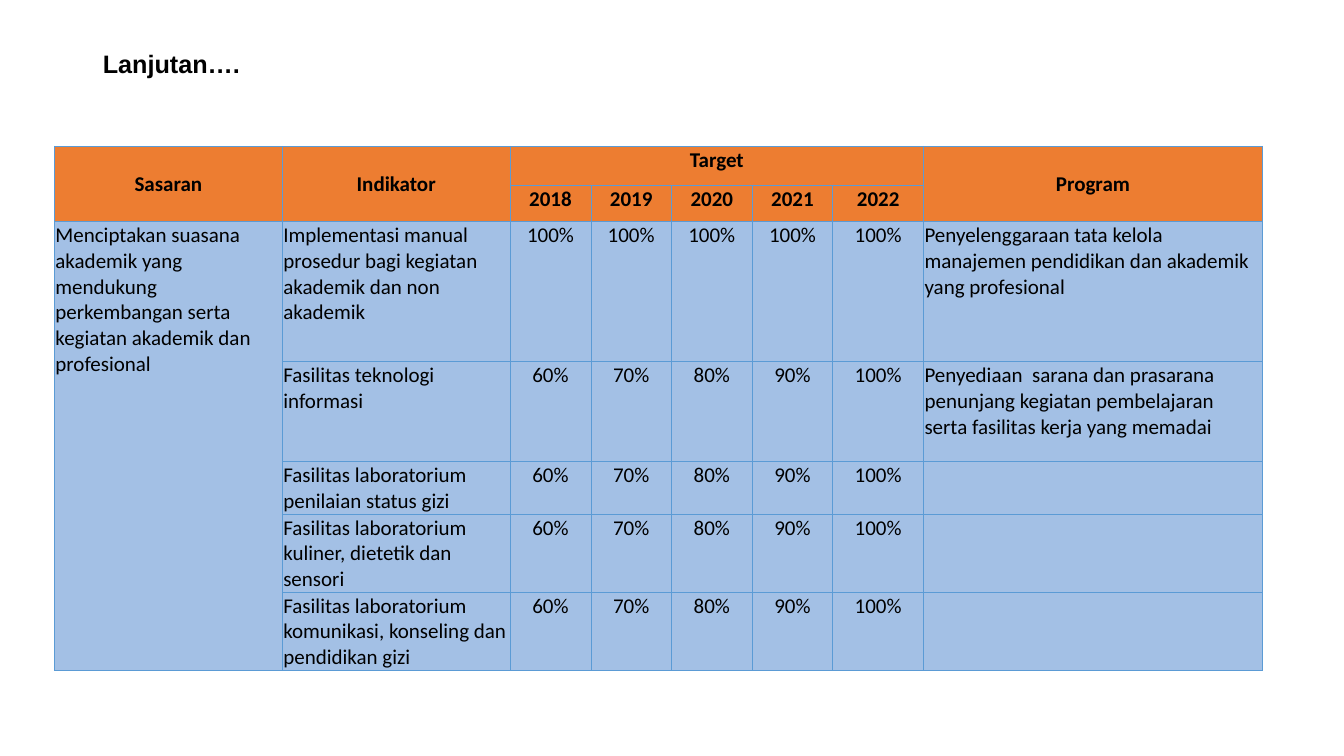
from lxml.etree import SubElement
from pptx import Presentation
from pptx.dml.color import RGBColor
from pptx.enum.text import MSO_ANCHOR, PP_ALIGN
from pptx.oxml.ns import qn
from pptx.util import Inches, Pt

BLACK = RGBColor(0x00, 0x00, 0x00)
ORANGE = RGBColor(0xED, 0x7D, 0x31)
LIGHT_BLUE = RGBColor(0xA3, 0xC0, 0xE5)
BORDER_BLUE = RGBColor(0x5B, 0x9B, 0xD5)

YEARS = ["2018", "2019", "2020", "2021", "2022"]
RISING_TARGETS = ["60%", "70%", "80%", "90%", "100%"]
COLUMN_WIDTHS = [2.26, 2.26, 0.8, 0.8, 0.8, 0.8, 0.9, 3.36]
ROW_HEIGHTS = [0.39, 0.36, 1.39, 0.99, 0.4, 0.59, 0.59]
HEADER_ROWS = 2
YEAR_COLUMNS = range(2, 7)

PLAN = [
    ["Sasaran", "Indikator", "Target", "", "", "", "", "Program"],
    ["", "", *YEARS, ""],
    ["Menciptakan suasana akademik yang mendukung  perkembangan serta "
     "kegiatan akademik dan profesional",
     "Implementasi manual prosedur bagi kegiatan akademik dan non akademik",
     *["100%"] * len(YEARS),
     "Penyelenggaraan tata kelola manajemen pendidikan dan akademik yang profesional"],
    ["", "Fasilitas teknologi informasi", *RISING_TARGETS,
     "Penyediaan  sarana dan prasarana penunjang kegiatan pembelajaran "
     "serta fasilitas kerja yang memadai"],
    ["", "Fasilitas laboratorium penilaian status gizi", *RISING_TARGETS, ""],
    ["", "Fasilitas laboratorium kuliner, dietetik dan sensori", *RISING_TARGETS, ""],
    ["", "Fasilitas laboratorium komunikasi, konseling dan pendidikan gizi",
     *RISING_TARGETS, ""],
]
MERGES = [((0, 0), (1, 0)), ((0, 1), (1, 1)), ((0, 2), (0, 6)),
          ((0, 7), (1, 7)), ((2, 0), (6, 0))]


class SlideBuilder:
    title_font = {"name": "Arial", "size": Pt(18), "bold": True}
    table_font = {"name": "Calibri", "size": Pt(15)}
    cell_margins = {"margin_left": Inches(0.01), "margin_right": Inches(0.01),
                    "margin_top": Inches(0.01), "margin_bottom": 0}

    def __init__(self, presentation):
        self.slide = presentation.slides.add_slide(presentation.slide_layouts[5])

    def apply(self, target, values):
        for attribute, value in values.items():
            setattr(target, attribute, value)

    def style_text(self, paragraph, font):
        self.apply(paragraph.font, font)
        paragraph.font.color.rgb = BLACK

    def title(self, text, left, top, width, height):
        heading = self.slide.shapes.title
        self.apply(heading, {"left": Inches(left), "top": Inches(top),
                             "width": Inches(width), "height": Inches(height)})
        heading.text_frame.text = text
        heading.text_frame.vertical_anchor = MSO_ANCHOR.MIDDLE
        paragraph = heading.text_frame.paragraphs[0]
        self.apply(paragraph, {"alignment": PP_ALIGN.LEFT, "line_spacing": 0.9})
        self.style_text(paragraph, self.title_font)

    def borders(self, cell):
        properties = cell._tc.get_or_add_tcPr()
        for side in ("a:lnL", "a:lnR", "a:lnT", "a:lnB"):
            line = SubElement(properties, qn(side), w=str(Pt(0.5)))
            fill = SubElement(line, qn("a:solidFill"))
            SubElement(fill, qn("a:srgbClr"), val=str(BORDER_BLUE))

    def cell(self, cell, text, header, centered, middle):
        self.borders(cell)
        cell.fill.solid()
        cell.fill.fore_color.rgb = ORANGE if header else LIGHT_BLUE
        self.apply(cell, self.cell_margins)
        cell.vertical_anchor = MSO_ANCHOR.MIDDLE if middle else MSO_ANCHOR.TOP
        cell.text = text
        paragraph = cell.text_frame.paragraphs[0]
        paragraph.alignment = PP_ALIGN.CENTER if centered else PP_ALIGN.LEFT
        self.style_text(paragraph, {**self.table_font, "bold": header})

    def table(self, rows, left, top):
        table = self.slide.shapes.add_table(
            len(ROW_HEIGHTS), len(COLUMN_WIDTHS), Inches(left), Inches(top),
            Inches(sum(COLUMN_WIDTHS)), Inches(sum(ROW_HEIGHTS))).table
        for column, width in zip(table.columns, COLUMN_WIDTHS):
            column.width = Inches(width)
        for row, height in zip(table.rows, ROW_HEIGHTS):
            row.height = Inches(height)
        for row_index, row in enumerate(rows):
            header = row_index < HEADER_ROWS
            for column_index, text in enumerate(row):
                yearly = column_index in YEAR_COLUMNS
                self.cell(table.cell(row_index, column_index), text, header,
                          header or yearly, header and not yearly)
        for first, last in MERGES:
            table.cell(*first).merge(table.cell(*last))


def main():
    presentation = Presentation()
    presentation.slide_width = Inches(13.33)
    presentation.slide_height = Inches(7.5)
    builder = SlideBuilder(presentation)
    builder.title("Lanjutan….", 0.92, 0.4, 11.5, 0.5)
    builder.table(PLAN, 0.54, 1.45)
    presentation.save("out.pptx")


if __name__ == "__main__":
    main()
